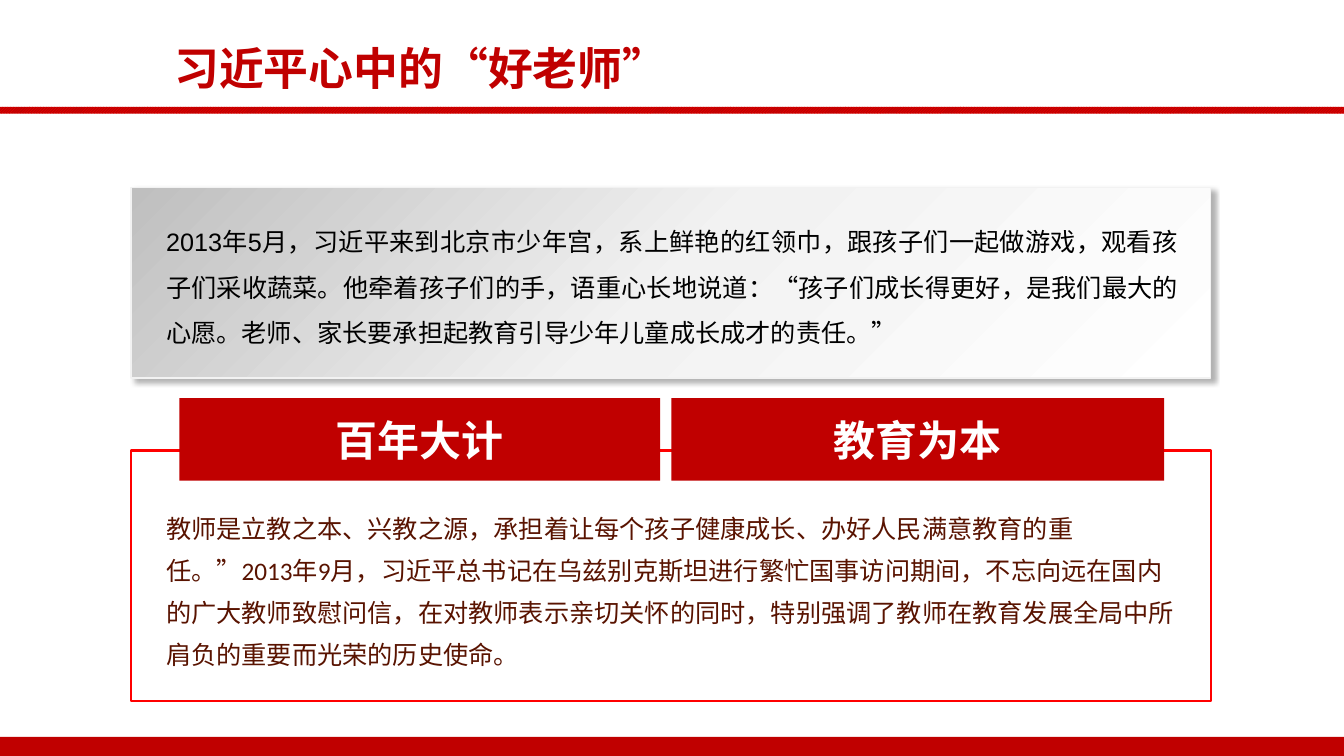
"""Build a slide about good teachers with a quotation panel and a framed message."""
from lxml.etree import SubElement
from pptx import Presentation
from pptx.dml.color import RGBColor
from pptx.enum.dml import MSO_PATTERN
from pptx.enum.shapes import MSO_SHAPE
from pptx.enum.text import MSO_ANCHOR, MSO_AUTO_SIZE, PP_ALIGN
from pptx.oxml.ns import qn
from pptx.util import Pt

WIDTH, HEIGHT = 960, 540
PANEL_LEFT, PANEL_WIDTH = 93.6, 771.1
TEXT_LEFT, TEXT_WIDTH = 111.6, 737.3


def colour(value):
    return RGBColor.from_string(value)


class SlideBuilder:
    red = "C00000"
    bright = "FF0000"
    heading_font = "Noto Sans CJK SC"

    def __init__(self, deck):
        self.page = deck.slides.add_slide(deck.slide_layouts[6])

    def rectangle(self, left, top, width, height, fill=None, line=None,
                  line_width=1, kind=MSO_SHAPE.RECTANGLE):
        box = self.page.shapes.add_shape(kind, Pt(left), Pt(top), Pt(width), Pt(height))
        box.shadow.inherit = False
        if fill:
            box.fill.solid()
            box.fill.fore_color.rgb = colour(fill)
        else:
            box.fill.background()
        if line:
            box.line.color.rgb = colour(line)
            box.line.width = Pt(line_width)
        else:
            box.line.fill.background()
        return box

    def hatched_rule(self, top, height):
        rule = self.rectangle(0, top, WIDTH, height)
        rule.fill.patterned()
        rule.fill.pattern = MSO_PATTERN.DARK_UPWARD_DIAGONAL
        rule.fill.fore_color.rgb = colour(self.bright)
        rule.fill.back_color.rgb = colour(self.red)

    def frame(self, left, top, width, height):
        frame = self.rectangle(left, top, width, height, line=self.bright,
                               line_width=1.5, kind=MSO_SHAPE.ROUNDED_RECTANGLE)
        frame.adjustments[0] = 0

    def gradient_panel(self, left, top, width, height, stops):
        panel = self.rectangle(left, top, width, height, line="F2F2F2")
        panel.fill.gradient()
        panel.fill.gradient_angle = 315
        stop_list = panel.element.spPr.find(qn("a:gradFill")).find(qn("a:gsLst"))
        for stop in list(stop_list):
            stop_list.remove(stop)
        for position, value in stops:
            stop = SubElement(stop_list, qn("a:gs"), pos=str(position * 1000))
            SubElement(stop, qn("a:srgbClr"), val=value)
        effects = panel.element.spPr.find(qn("a:effectLst"))
        shadow = SubElement(effects, qn("a:outerShdw"), blurRad=str(Pt(4)),
                            dist=str(Pt(3)), dir="2700000", algn="tl", rotWithShape="0")
        shade = SubElement(shadow, qn("a:srgbClr"), val="000000")
        SubElement(shade, qn("a:alpha"), val="30000")

    def add_text(self, box, text, size, font, ink, bold=False, align=None, spacing=None):
        box.text_frame.word_wrap = True
        para = box.text_frame.paragraphs[0]
        if align is not None:
            para.alignment = align
        if spacing:
            para.line_spacing = spacing
        span = para.add_run()
        span.text = text
        span.font.size = Pt(size)
        span.font.bold = bold
        span.font.name = font
        span.font.color.rgb = colour(ink)
        properties = span.font._element
        properties.set("lang", "zh-CN")
        SubElement(properties, qn("a:ea"), typeface=self.heading_font)

    def text_box(self, left, top, width, height, text, size, font, ink, **style):
        box = self.page.shapes.add_textbox(Pt(left), Pt(top), Pt(width), Pt(height))
        self.add_text(box, text, size, font, ink, **style)
        box.text_frame.auto_size = MSO_AUTO_SIZE.SHAPE_TO_FIT_TEXT

    def banner(self, left, top, width, height, text):
        box = self.rectangle(left, top, width, height, self.red)
        box.text_frame.vertical_anchor = MSO_ANCHOR.MIDDLE
        self.add_text(box, text, 30, self.heading_font, "FFFFFF", bold=True,
                      align=PP_ALIGN.CENTER)


def main():
    deck = Presentation()
    deck.slide_width, deck.slide_height = Pt(WIDTH), Pt(HEIGHT)
    slide = SlideBuilder(deck)

    slide.rectangle(0, 526.3, WIDTH, 13.7, slide.red)
    slide.hatched_rule(76.3, 5)
    slide.text_box(117.4, 25.9, 583.9, 46.1, "习近平心中的“好老师”", 32,
                   slide.heading_font, slide.red, bold=True)

    slide.gradient_panel(PANEL_LEFT, 133.9, PANEL_WIDTH, 136.1,
                         [(0, "BFBFBF"), (50, "F2F2F2"), (100, "FFFFFF")])
    slide.text_box(TEXT_LEFT, 147.6, TEXT_WIDTH, 101.5,
                   "2013年5月，习近平来到北京市少年宫，系上鲜艳的红领巾，跟孩子们一起做游戏，"
                   "观看孩子们采收蔬菜。他牵着孩子们的手，语重心长地说道：“孩子们成长得更好，"
                   "是我们最大的心愿。老师、家长要承担起教育引导少年儿童成长成才的责任。”",
                   18, "Arial", "000000", align=PP_ALIGN.JUSTIFY, spacing=1.5)

    slide.frame(PANEL_LEFT, 321.8, PANEL_WIDTH, 178.6)
    slide.text_box(TEXT_LEFT, 354.2, TEXT_WIDTH, 126.7,
                   "教师是立教之本、兴教之源，承担着让每个孩子健康成长、办好人民满意教育的重任。”"
                   "2013年9月，习近平总书记在乌兹别克斯坦进行繁忙国事访问期间，"
                   "不忘向远在国内的广大教师致慰问信，在对教师表示亲切关怀的同时，"
                   "特别强调了教师在教育发展全局中所肩负的重要而光荣的历史使命。",
                   18, "Calibri", "591300", spacing=1.4)

    for left, width, label in [(128.2, 343.4, "百年大计"), (479.5, 352.1, "教育为本")]:
        slide.banner(left, 284.4, width, 59, label)

    deck.save("out.pptx")


if __name__ == "__main__":
    main()
